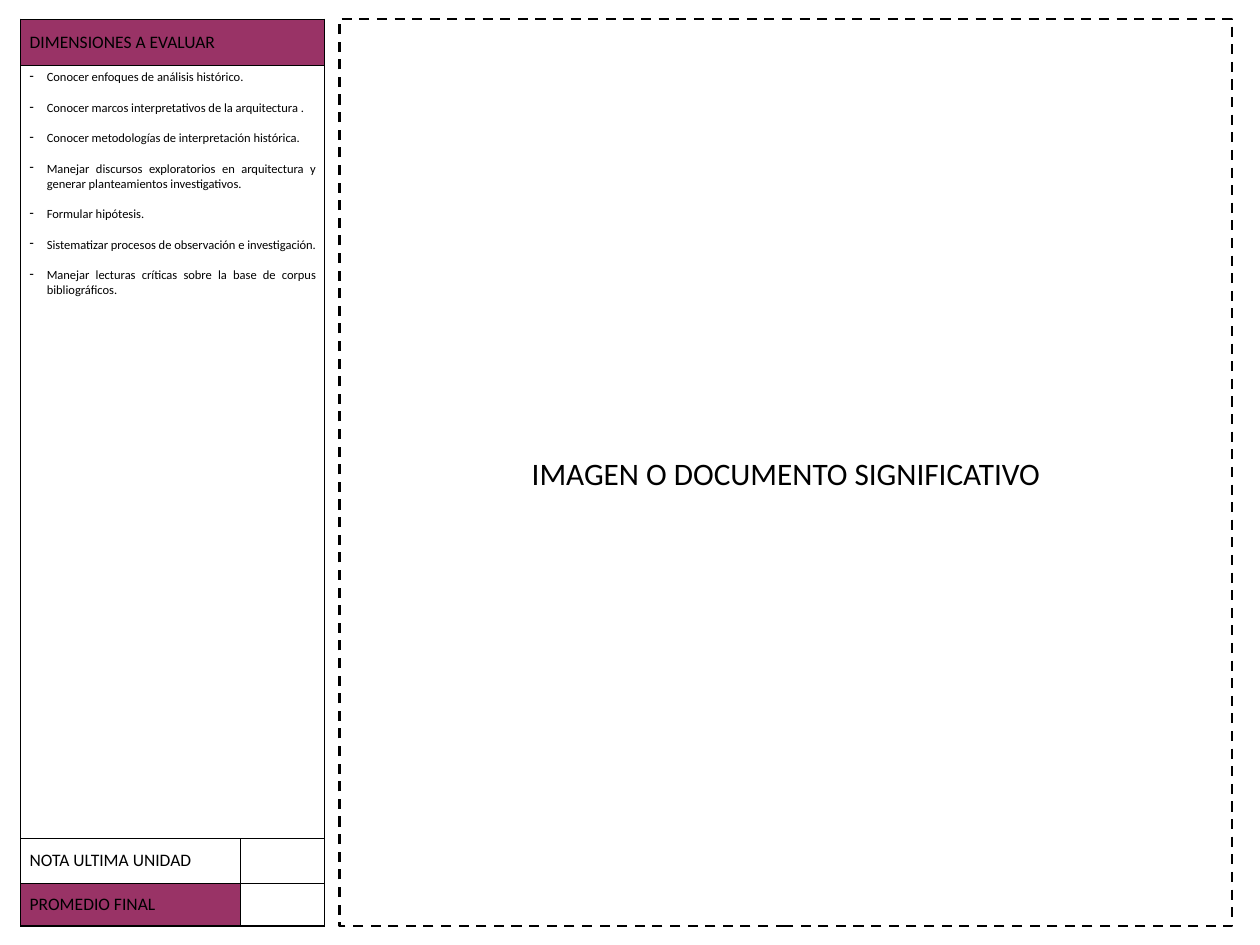
import pptx
import pptx.util
import pptx.dml.color
import pptx.enum.dml
import pptx.enum.shapes
import pptx.enum.text
import pptx.oxml.ns
from lxml import etree

Inches, Pt = pptx.util.Inches, pptx.util.Pt
Align, Anchor = pptx.enum.text.PP_ALIGN, pptx.enum.text.MSO_ANCHOR
qn = pptx.oxml.ns.qn

# Content
HEADING = "DIMENSIONES A EVALUAR"
DIMENSIONS = [
    "Conocer enfoques de análisis histórico.",
    "Conocer marcos interpretativos de la arquitectura .",
    "Conocer metodologías de interpretación histórica.",
    "Manejar discursos exploratorios en arquitectura y generar planteamientos investigativos.",
    "Formular hipótesis.",
    "Sistematizar procesos de observación e investigación.",
    "Manejar lecturas críticas sobre la base de corpus bibliográficos.",
]
GRADES = ["NOTA ULTIMA UNIDAD", "PROMEDIO FINAL"]
IMAGE_LABEL = "IMAGEN O DOCUMENTO SIGNIFICATIVO"

# Look and layout, in inches and points
COLORS = {"ink": "000000", "accent": "993366", "paper": "FFFFFF"}
FONT = "Calibri"
WIDTH, HEIGHT = 14, 10.5
TOP = 0.02 * HEIGHT
PANEL_HEIGHT = HEIGHT - 2 * TOP
TABLE_LEFT, IMAGE_LEFT, IMAGE_WIDTH = 0.23, 3.77, 9.92
COLUMNS = [2.44, 0.94]
ROWS = [0.52, 8.59, 0.49, 0.48]
FILLS = [["accent", "accent"], [None, None], ["paper", None], ["accent", None]]
ROW_LINES = [0.5, 1, 1, 0.5, 1]
COLUMN_LINES = [1, 0.5, 1]
MERGED_ROWS = (0, 1)
INDENT = 0.19


def color(name):
    return pptx.dml.color.RGBColor.from_string(COLORS[name])


def write(frame, text, size, align=Align.LEFT, bullet=None, gap=0, first=True):
    """Put one paragraph of text in a frame."""
    para = frame.paragraphs[0] if first else frame.add_paragraph()
    para.alignment = align
    para.space_after = Pt(gap)
    span = para.add_run()
    span.text = text
    span.font.name, span.font.size = FONT, Pt(size)
    span.font.color.rgb = color("ink")
    if bullet:
        properties = para._p.get_or_add_pPr()
        properties.set("marL", str(Inches(INDENT)))
        properties.set("indent", str(-Inches(INDENT)))
        etree.SubElement(properties, qn("a:buChar"), char=bullet)


def set_borders(cell, weights):
    """Draw cell borders; weights maps L, R, T, B to points."""
    properties = cell._tc.get_or_add_tcPr()
    for place, (side, weight) in enumerate(weights.items()):
        line = etree.Element(qn("a:ln" + side), w=str(Pt(weight)))
        fill = etree.SubElement(line, qn("a:solidFill"))
        etree.SubElement(fill, qn("a:srgbClr"), val=COLORS["ink"])
        properties.insert(place, line)


def add_evaluation_table(page):
    frame = page.shapes.add_table(
        len(ROWS), len(COLUMNS), Inches(TABLE_LEFT), Inches(TOP),
        Inches(sum(COLUMNS)), Inches(sum(ROWS)))
    table = frame.table
    table.first_row = table.horz_banding = False
    for column, width in zip(table.columns, COLUMNS):
        column.width = Inches(width)
    for row, height in zip(table.rows, ROWS):
        row.height = Inches(height)

    # Fills and borders
    for r, names in enumerate(FILLS):
        merged = r in MERGED_ROWS
        for c, name in enumerate(names):
            cell = table.cell(r, c)
            if name:
                cell.fill.solid()
                cell.fill.fore_color.rgb = color(name)
            else:
                cell.fill.background()
            weights = {"L": COLUMN_LINES[c],
                       "R": COLUMN_LINES[-1 if merged else c + 1],
                       "T": ROW_LINES[r], "B": ROW_LINES[r + 1]}
            if merged and c > 0:
                del weights["L"]
            set_borders(cell, weights)
    for r in MERGED_ROWS:
        table.cell(r, 0).merge(table.cell(r, len(COLUMNS) - 1))

    # Labels and list
    for r, text in zip((0, 2, 3), [HEADING] + GRADES):
        cell = table.cell(r, 0)
        cell.vertical_anchor = Anchor.MIDDLE
        write(cell.text_frame, text, 14)
    for i, text in enumerate(DIMENSIONS):
        write(table.cell(1, 0).text_frame, text, 10, align=Align.JUSTIFY,
              bullet="-", gap=12.2, first=i == 0)


def add_image_area(page):
    box = page.shapes.add_shape(
        pptx.enum.shapes.MSO_SHAPE.RECTANGLE, Inches(IMAGE_LEFT), Inches(TOP),
        Inches(IMAGE_WIDTH), Inches(PANEL_HEIGHT))
    box.shadow.inherit = False
    box.fill.background()
    box.line.color.rgb = color("ink")
    box.line.width = Pt(2)
    box.line.dash_style = pptx.enum.dml.MSO_LINE.DASH
    box.text_frame.word_wrap = True
    box.text_frame.vertical_anchor = Anchor.MIDDLE
    write(box.text_frame, IMAGE_LABEL, 25, align=Align.CENTER)


def main():
    deck = pptx.Presentation()
    deck.slide_width, deck.slide_height = Inches(WIDTH), Inches(HEIGHT)
    page = deck.slides.add_slide(deck.slide_layouts[6])
    add_evaluation_table(page)
    add_image_area(page)
    deck.save("out.pptx")


if __name__ == "__main__":
    main()
